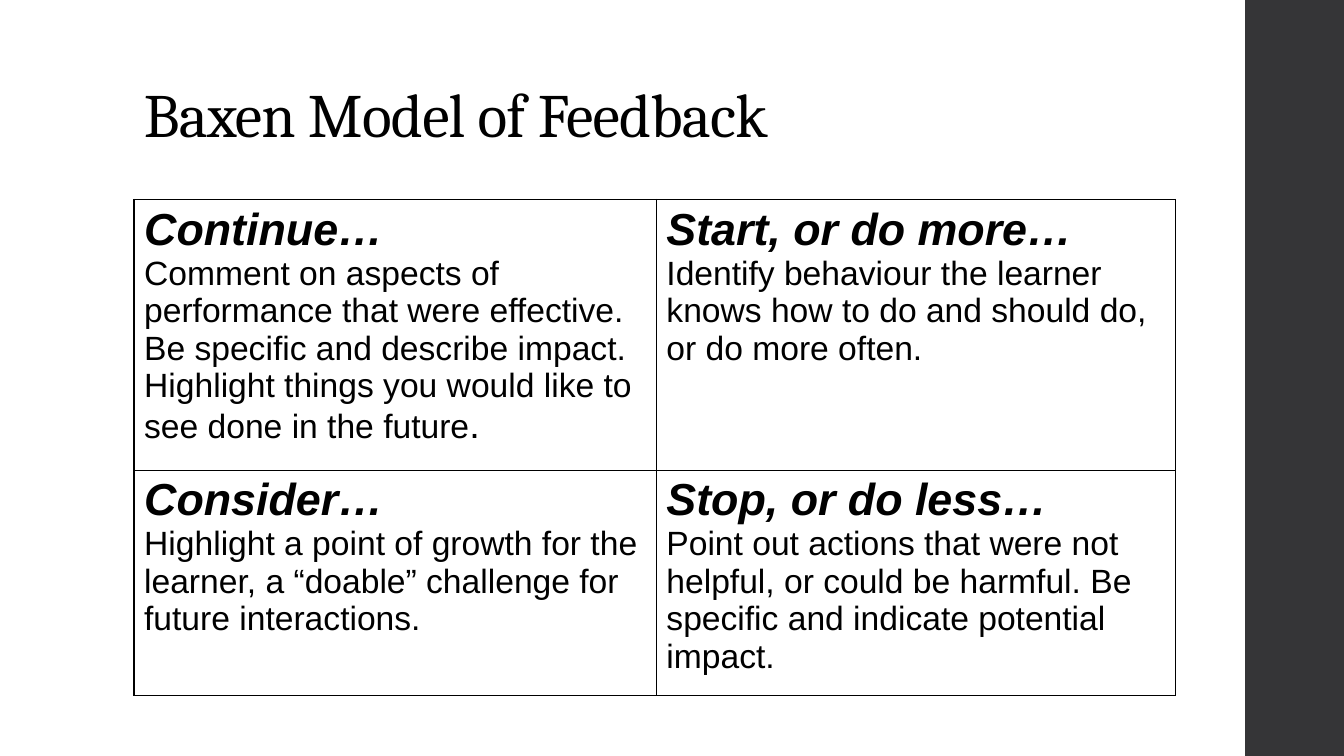
from lxml import etree
from pptx import Presentation
from pptx.dml.color import RGBColor
from pptx.enum.shapes import MSO_SHAPE
from pptx.enum.text import MSO_ANCHOR
from pptx.oxml.ns import qn
from pptx.util import Inches, Pt

RECT = MSO_SHAPE.RECTANGLE
BOTTOM = MSO_ANCHOR.BOTTOM
BLACK = RGBColor(0x00, 0x00, 0x00)
WHITE = RGBColor(0xFF, 0xFF, 0xFF)
CHARCOAL = RGBColor(0x35, 0x35, 0x37)

COL_WIDTHS = [5.18, 5.15]
ROW_HEIGHTS = [2.68, 2.23]
# Each cell: heading, body and an optional larger ending
FEEDBACK = [
    [("Continue…",
      "Comment on aspects of performance that were effective. Be specific and "
      "describe impact. Highlight things you would like to see done in the future", "."),
     ("Start, or do more…",
      "Identify behaviour the learner knows how to do and should do, "
      "or do more often.", "")],
    [("Consider…",
      "Highlight a point of growth for the learner, a “doable” challenge for "
      "future interactions.", ""),
     ("Stop, or do less…",
      "Point out actions that were not helpful, or could be harmful. "
      "Be specific and indicate potential impact.", "")],
]


def add_run(p, text, size=24, font="Arial", color=BLACK, strong=False, spacing=None):
    r = p.add_run()
    r.text = text
    r.font.size = Pt(size)
    r.font.name = font
    r.font.color.rgb = color
    r.font.bold = r.font.italic = strong
    if spacing is not None:
        r.font._element.set("spc", str(int(spacing * 100)))


def add_side_band(s):
    sp = s.shapes.add_shape(RECT, Inches(12.35), 0, Inches(0.98), Inches(7.5))
    sp.shadow.inherit = False
    sp.fill.solid()
    sp.fill.fore_color.rgb = CHARCOAL
    sp.line.fill.background()


def add_title(s, text):
    sp = s.shapes.add_textbox(Inches(1.33), Inches(0.3), Inches(11.03), Inches(1.25))
    tf = sp.text_frame
    tf.word_wrap = True
    tf.vertical_anchor = BOTTOM
    p = tf.paragraphs[0]
    p.line_spacing = 0.9
    add_run(p, text, size=44, font="Cambria", spacing=-0.5)


def set_borders(cell, color, width):
    tcPr = cell._tc.get_or_add_tcPr()
    # Borders come before the fill in the cell properties
    for i, side in enumerate(("a:lnL", "a:lnR", "a:lnT", "a:lnB")):
        ln = etree.Element(qn(side), w=str(Pt(width)))
        fill = etree.SubElement(ln, qn("a:solidFill"))
        etree.SubElement(fill, qn("a:srgbClr"), val=str(color))
        tcPr.insert(i, ln)


def fill_cell(cell, heading, body, ending):
    cell.fill.solid()
    cell.fill.fore_color.rgb = WHITE
    set_borders(cell, BLACK, 1)
    tf = cell.text_frame
    add_run(tf.paragraphs[0], heading, size=32, strong=True)
    p = tf.add_paragraph()
    add_run(p, body)
    if ending:
        add_run(p, ending, size=27)


def add_feedback_table(s):
    table = s.shapes.add_table(
        len(ROW_HEIGHTS), len(COL_WIDTHS), Inches(1.33), Inches(1.98),
        Inches(sum(COL_WIDTHS)), Inches(sum(ROW_HEIGHTS))).table
    table.first_row = table.horz_banding = False
    for col, width in zip(table.columns, COL_WIDTHS):
        col.width = Inches(width)
    for i, height in enumerate(ROW_HEIGHTS):
        table.rows[i].height = Inches(height)
        for j, content in enumerate(FEEDBACK[i]):
            fill_cell(table.cell(i, j), *content)


def main():
    prs = Presentation()
    prs.slide_width, prs.slide_height = Inches(13.33), Inches(7.5)
    s = prs.slides.add_slide(prs.slide_layouts[6])
    add_side_band(s)
    add_title(s, "Baxen Model of Feedback")
    add_feedback_table(s)
    prs.save("out.pptx")


if __name__ == "__main__":
    main()
